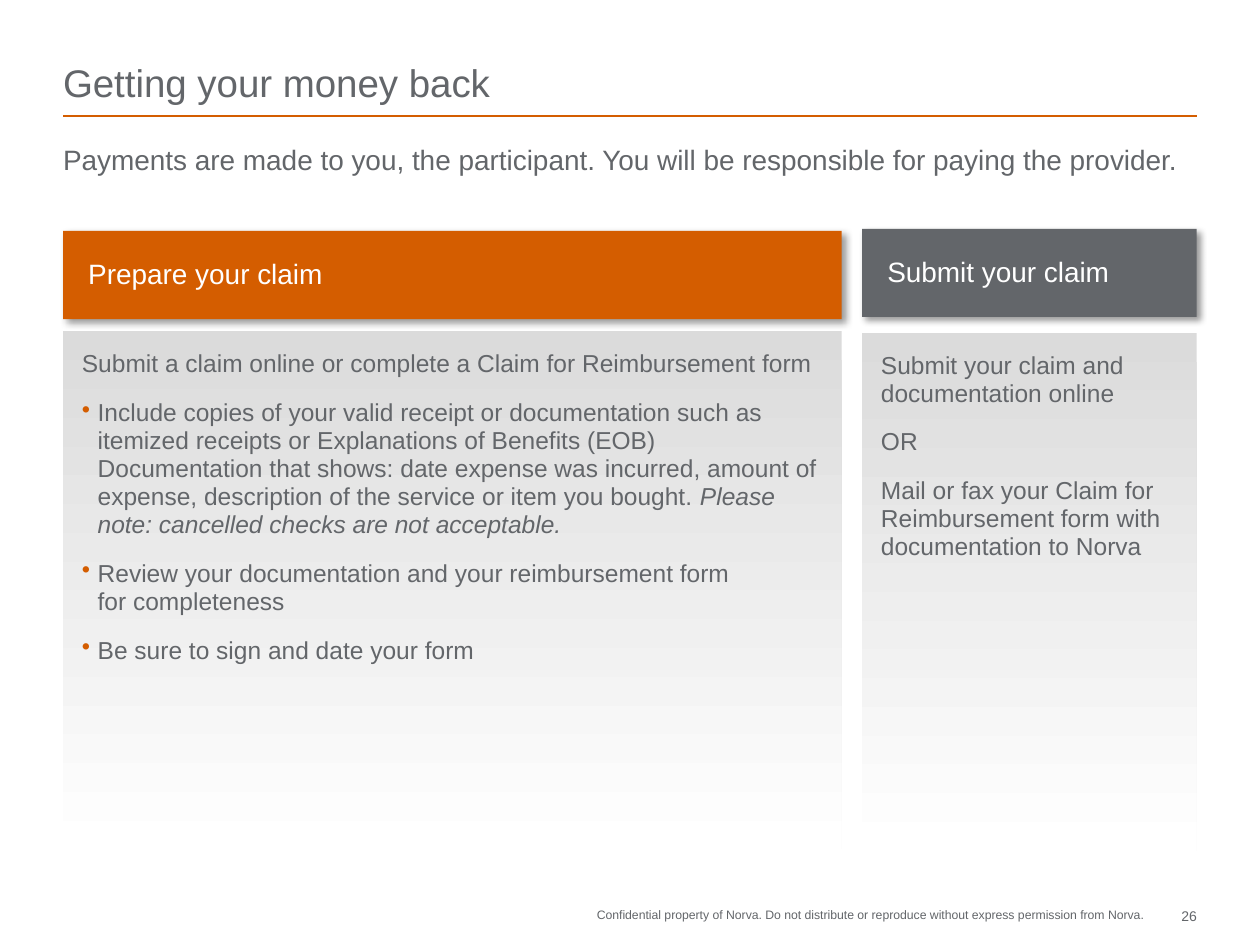
from lxml.etree import SubElement
from pptx import Presentation
from pptx.dml.color import RGBColor
from pptx.enum.shapes import MSO_CONNECTOR, MSO_SHAPE
from pptx.enum.text import MSO_ANCHOR, MSO_AUTO_SIZE, PP_ALIGN
from pptx.oxml.ns import qn
from pptx.util import Pt

ORANGE = RGBColor(0xD4, 0x5D, 0x00)
GRAY = RGBColor(0x63, 0x66, 0x6A)
LIGHT = RGBColor(0xDB, 0xDB, 0xDB)
WHITE = RGBColor(0xFF, 0xFF, 0xFF)

TITLE = "Getting your money back"
LEAD = "Payments are made to you, the participant. You will be responsible for paying the provider."
FOOTER = ("Confidential property of Norva. Do not distribute or reproduce "
          "without express permission from Norva.")
PAGE = "26"

# (text, italic ending, bulleted)
PREPARE = [
    ("Submit a claim online or complete a Claim for Reimbursement form", "", False),
    ("Include copies of your valid receipt or documentation such as itemized receipts or "
     "Explanations of Benefits (EOB) Documentation that shows: date expense was incurred, "
     "amount of expense, description of the service or item you bought. ",
     "Please note: cancelled checks are not acceptable.", True),
    ("Review your documentation and your reimbursement form \vfor completeness", "", True),
    ("Be sure to sign and date your form", "", True),
]
SUBMIT = [
    ("Submit your claim and documentation online", "", False),
    ("OR", "", False),
    ("Mail or fax your Claim for Reimbursement form with documentation to Norva", "", False),
]
COLUMNS = [
    dict(head="Prepare your claim", color=ORANGE, items=PREPARE,
         left=36, width=445, head_top=132, panel_top=189.4),
    dict(head="Submit your claim", color=GRAY, items=SUBMIT,
         left=492.6, width=191.2, head_top=130.8, panel_top=190.2),
]
MARGIN, CONTENT_W = 36, 648
HEAD_H, PANEL_H = 50.4, 296


def place(shape, left, top, width, height):
    shape.left, shape.top, shape.width, shape.height = map(Pt, (left, top, width, height))


def set_frame(tf, insets=(0, 0, 0, 0), anchor=MSO_ANCHOR.TOP, wrap=True):
    tf.margin_left, tf.margin_top, tf.margin_right, tf.margin_bottom = map(Pt, insets)
    tf.vertical_anchor = anchor
    tf.auto_size = MSO_AUTO_SIZE.NONE
    tf.word_wrap = wrap


def style(p, size, color=GRAY, align=PP_ALIGN.LEFT, spacing=0.95, before=0):
    p.alignment = align
    p.line_spacing = spacing
    p.space_before = Pt(before)
    for r in p.runs:
        r.font.name = "Arial"
        r.font.size = Pt(size)
        r.font.color.rgb = color


def set_bullet(p, bulleted):
    pPr = p._p.get_or_add_pPr()
    indent = Pt(9) if bulleted else 0
    pPr.set("marL", str(indent))
    pPr.set("indent", str(-indent))
    if bulleted:
        SubElement(SubElement(pPr, qn("a:buClr")), qn("a:srgbClr"), val=str(ORANGE))
        SubElement(pPr, qn("a:buChar"), char="•")
    else:
        SubElement(pPr, qn("a:buNone"))


def add_rect(s, left, top, width, height):
    shape = s.shapes.add_shape(MSO_SHAPE.RECTANGLE, *map(Pt, (left, top, width, height)))
    shape.shadow.inherit = False
    shape.line.fill.background()
    return shape


def add_shadow(shape):
    effects = shape._element.spPr.find(qn("a:effectLst"))
    shadow = SubElement(effects, qn("a:outerShdw"), blurRad=str(Pt(4)), dist=str(Pt(3)),
                        dir="2700000", algn="tl", rotWithShape="0")
    color = SubElement(shadow, qn("a:srgbClr"), val="000000")
    SubElement(color, qn("a:alpha"), val="40000")


def add_panel(s, col):
    panel = add_rect(s, col["left"], col["panel_top"], col["width"], PANEL_H)
    panel.fill.gradient()
    panel.fill.gradient_angle = 270
    for stop, color in zip(panel.fill.gradient_stops, (LIGHT, WHITE)):
        stop.color.rgb = color
    tf = panel.text_frame
    set_frame(tf, (10.8,) * 4)
    for i, (text, ending, bulleted) in enumerate(col["items"]):
        p = tf.add_paragraph() if i else tf.paragraphs[0]
        p.text = text
        set_bullet(p, bulleted)
        if ending:
            r = p.add_run()
            r.text = ending
            r.font.italic = True
        style(p, 14, before=12 if i else 0)


def add_header(s, col):
    header = add_rect(s, col["left"], col["head_top"], col["width"], HEAD_H)
    header.fill.solid()
    header.fill.fore_color.rgb = col["color"]
    add_shadow(header)
    set_frame(header.text_frame, (14.4, 0, 0, 0), MSO_ANCHOR.MIDDLE)
    header.text_frame.text = col["head"]
    style(header.text_frame.paragraphs[0], 16, WHITE)


def add_note(s, text, size, box, wrap):
    note = s.shapes.add_textbox(*map(Pt, box))
    set_frame(note.text_frame, wrap=wrap)
    note.text_frame.text = text
    style(note.text_frame.paragraphs[0], size, align=PP_ALIGN.RIGHT, spacing=1.0)


def main():
    prs = Presentation()
    prs.slide_width, prs.slide_height = Pt(720), Pt(540)
    s = prs.slides.add_slide(prs.slide_layouts[1])

    title, lead = s.shapes.title, s.placeholders[1]
    place(title, MARGIN, 12.2, CONTENT_W, 48.2)
    set_frame(title.text_frame, anchor=MSO_ANCHOR.BOTTOM)
    title.text_frame.text = TITLE
    style(title.text_frame.paragraphs[0], 22, spacing=0.9)

    place(lead, MARGIN, 75.6, CONTENT_W, 33.1)
    set_frame(lead.text_frame, anchor=MSO_ANCHOR.MIDDLE)
    lead.text_frame.text = LEAD
    set_bullet(lead.text_frame.paragraphs[0], False)
    style(lead.text_frame.paragraphs[0], 16)

    rule = s.shapes.add_connector(MSO_CONNECTOR.STRAIGHT, Pt(MARGIN), Pt(66.2),
                                  Pt(MARGIN + CONTENT_W), Pt(66.2))
    rule.line.color.rgb = ORANGE
    rule.line.width = Pt(1)
    SubElement(rule._element.spPr, qn("a:effectLst"))

    for col in COLUMNS:
        add_panel(s, col)
        add_header(s, col)

    add_note(s, FOOTER, 7, (334, 518.4, 319.6, 8.6), wrap=False)
    add_note(s, PAGE, 8, (660.2, 518.4, 23.8, 12.2), wrap=True)

    prs.save("out.pptx")


if __name__ == "__main__":
    main()
